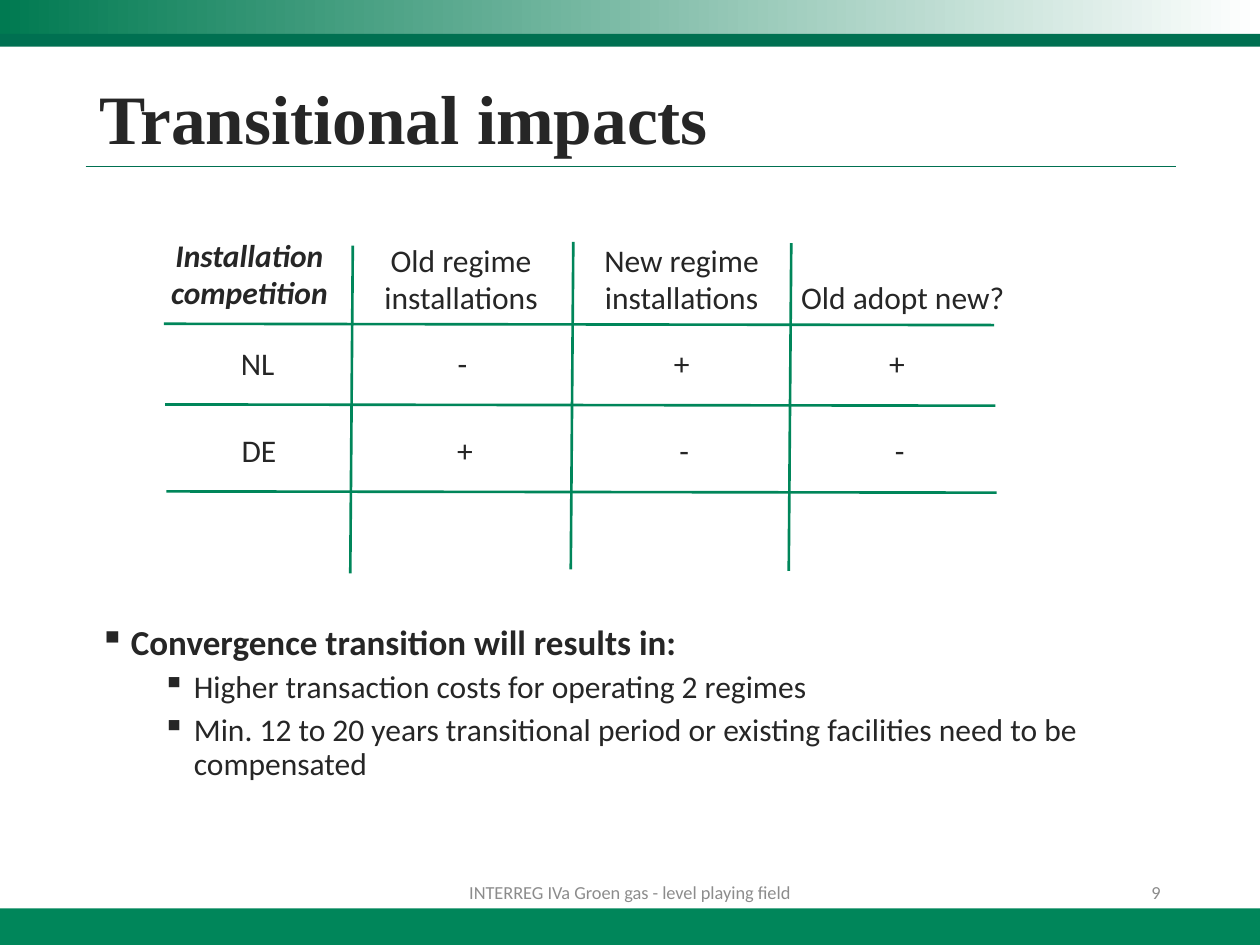
from dataclasses import dataclass

from lxml import etree
from pptx import Presentation
from pptx.dml.color import RGBColor
from pptx.enum import shapes, text
from pptx.oxml.ns import qn
from pptx.util import Inches, Pt


@dataclass(frozen=True)
class Theme:
    green: RGBColor = RGBColor(0x00, 0x86, 0x5A)
    dark_green: RGBColor = RGBColor(0x00, 0x70, 0x51)
    fade_start: RGBColor = RGBColor(0x00, 0x7A, 0x51)
    white: RGBColor = RGBColor(0xFF, 0xFF, 0xFF)
    ink: RGBColor = RGBColor(0x26, 0x26, 0x26)
    grey: RGBColor = RGBColor(0x8C, 0x8C, 0x8C)
    heading_font: str = "Times New Roman"
    body_font: str = "Calibri"
    title_size: float = 39.6
    lead_size: float = 20
    body_size: float = 18
    footer_size: float = 10.5


theme = Theme()
prs = Presentation()
prs.slide_width, prs.slide_height = Inches(10), Inches(7.5)
slide = prs.slides.add_slide(prs.slide_layouts[6])


def add_text(lines, left, top, width, height, size=theme.body_size, color=theme.ink,
             font=theme.body_font, align=text.PP_ALIGN.CENTER,
             anchor=text.MSO_ANCHOR.TOP, bold=False, italic=False):
    """Add a wrapping text box with one paragraph per line; return its paragraphs."""
    frame = slide.shapes.add_textbox(
        Inches(left), Inches(top), Inches(width), Inches(height)).text_frame
    frame.word_wrap = True
    frame.vertical_anchor = anchor
    frame.text = "\n".join(lines)
    for paragraph in frame.paragraphs:
        paragraph.alignment = align
        paragraph.font.name = font
        paragraph.font.size = Pt(size)
        paragraph.font.color.rgb = color
        paragraph.font.bold = bold
        paragraph.font.italic = italic
    return frame.paragraphs


def add_rule(x1, y1, x2, y2, color, width):
    rule = slide.shapes.add_connector(
        shapes.MSO_CONNECTOR.STRAIGHT, Inches(x1), Inches(y1), Inches(x2), Inches(y2))
    rule.line.color.rgb = color
    rule.line.width = Pt(width)
    etree.SubElement(rule._element.spPr, qn("a:effectLst"))


# Bands across the top and bottom
for top, height, color in [(7.21, 0.29, theme.green), (0, 0.29, None),
                           (0.27, 0.1, theme.dark_green)]:
    band = slide.shapes.add_shape(
        shapes.MSO_SHAPE.RECTANGLE, 0, Inches(top), prs.slide_width, Inches(height))
    band.shadow.inherit = False
    band.line.fill.background()
    if color:
        band.fill.solid()
        band.fill.fore_color.rgb = color
    else:
        band.fill.gradient()
        band.fill.gradient_angle = 0
        for stop, stop_color in zip(band.fill.gradient_stops,
                                    (theme.fade_start, theme.white)):
            stop.color.rgb = stop_color

# Title
add_rule(0.68, 1.32, 9.33, 1.32, theme.dark_green, 0.5)
title = add_text(["Transitional impacts"], 0.69, 0.62, 8.62, 0.7, theme.title_size,
                 font=theme.heading_font, align=text.PP_ALIGN.LEFT,
                 anchor=text.MSO_ANCHOR.MIDDLE, bold=True)
title[0].line_spacing = 0.9

# Conclusions
conclusions = add_text(
    ["Convergence transition will results in:",
     "Higher transaction costs for operating 2 regimes",
     "Min. 12 to 20 years transitional period or existing facilities need to be compensated"],
    0.69, 4.91, 8.62, 2.01, align=text.PP_ALIGN.LEFT)
for index, paragraph in enumerate(conclusions):
    is_lead = index == 0
    paragraph.level = 0 if is_lead else 1
    paragraph.line_spacing = 0.9
    paragraph.space_before = Pt(10 if is_lead else 5)
    paragraph.font.bold = is_lead
    paragraph.font.size = Pt(theme.lead_size if is_lead else theme.body_size)
    properties = paragraph._p.get_or_add_pPr()
    properties.set("marL", str(Inches(0.25 if is_lead else 0.75)))
    properties.set("indent", str(Inches(-0.25)))
    bullet = etree.Element(qn("a:buChar"), char="▪")
    properties.find(qn("a:defRPr")).addprevious(bullet)

# Footer
for label, left, width, align in [
        ("INTERREG IVa Groen gas - level playing field", 3.31, 3.38, text.PP_ALIGN.CENTER),
        ("9", 7.06, 2.25, text.PP_ALIGN.RIGHT)]:
    add_text([label], left, 6.95, width, 0.26, theme.footer_size, theme.grey,
             align=align, anchor=text.MSO_ANCHOR.MIDDLE)

# Hand-ruled competition grid, its lines slightly tilted
for left, top in [(1.3, 2.57), (1.31, 3.21), (1.32, 3.9)]:
    add_rule(left, top, left + 6.59, top + 0.01, theme.green, 1.5)
for left, top in [(2.8, 1.95), (4.55, 1.92), (6.28, 1.93)]:
    add_rule(left, top, left - 0.02, top + 2.6, theme.green, 1.5)

# Grid headings
add_text(["Installation competition"], 1.13, 1.82, 1.7, 0.71, bold=True, italic=True)
for heading, left, top, width, height in [
        ("Old regime installations", 2.81, 1.86, 1.7, 0.71),
        ("New regime installations", 4.56, 1.86, 1.7, 0.71),
        ("Old adopt new?", 6.23, 2.16, 1.87, 0.4)]:
    add_text([heading], left, top, width, height)

# Grid rows: country, then the effect in each column
column_lefts = (2.82, 4.56, 6.27)
for country, effects, top, shift in [("NL", "-++", 2.68, 0), ("DE", "+--", 3.37, 0.02)]:
    add_text([country], 1.52 + shift / 2, top, 1.05, 0.4)
    for effect, left in zip(effects, column_lefts):
        add_text([effect], left + shift, top, 1.7, 0.4)

prs.save("out.pptx")
